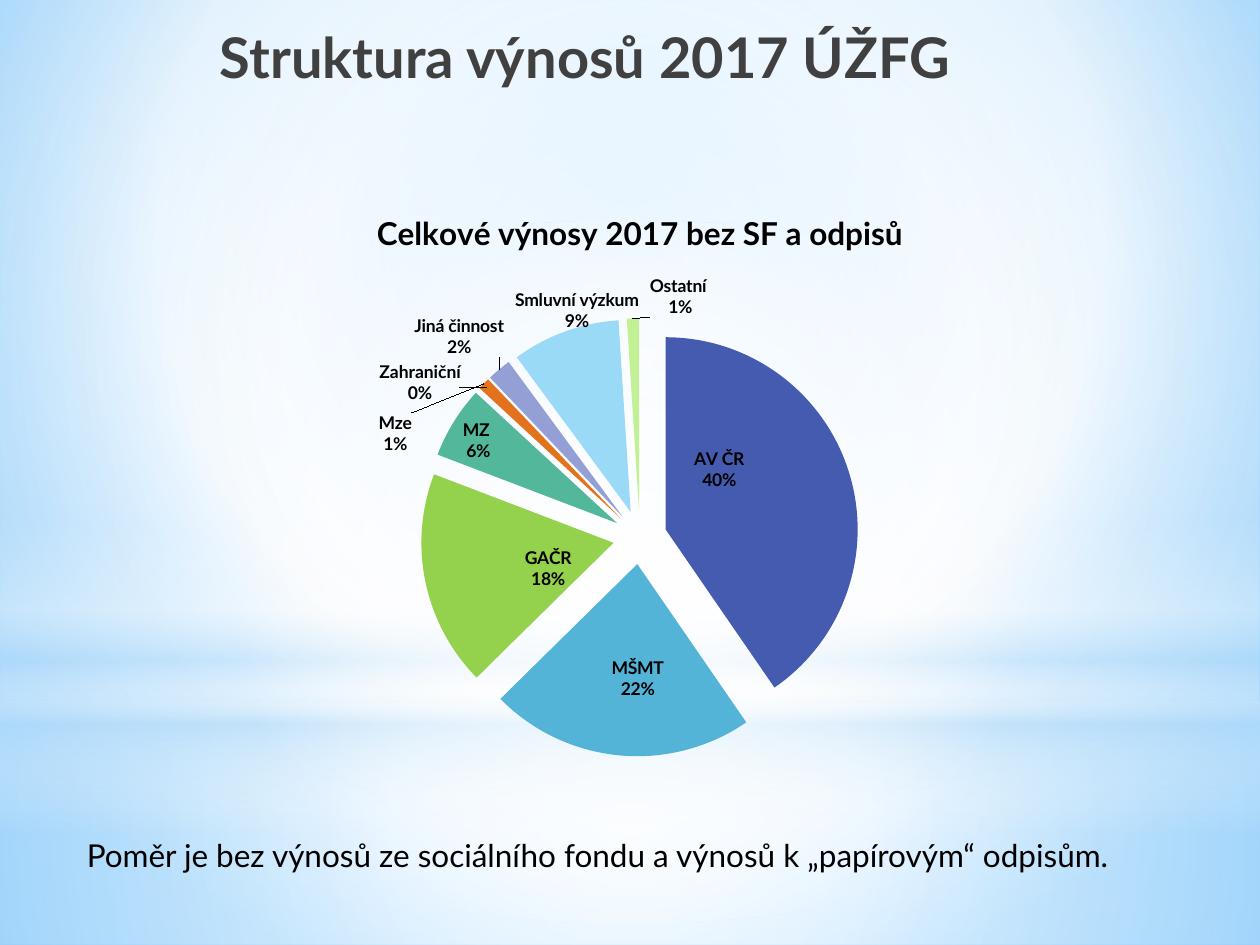
from lxml.etree import SubElement
from pptx import Presentation
from pptx.chart.data import CategoryChartData
from pptx.dml.color import RGBColor
from pptx.enum.chart import XL_CHART_TYPE, XL_LABEL_POSITION
from pptx.enum.shapes import MSO_CONNECTOR, MSO_SHAPE
from pptx.enum.text import MSO_ANCHOR, PP_ALIGN
from pptx.oxml import parse_xml
from pptx.oxml.ns import nsdecls, qn
from pptx.util import Cm, Pt

FONT = "Lato"
COLORS = {
    "text": "000000", "title": "404040", "white": "FFFFFF", "pale": "B4DCFA",
    "sky": "9ED5FF", "azure": "5BB9FF",
    "navy": "455BB0", "blue": "53B4D8", "green": "94D14C", "teal": "53B79B",
    "orange": "E3721D", "red": "D63A20", "lavender": "949FD6",
    "light blue": "9BDAF6", "light green": "C2F094",
}


def apply_gradient(fill, element, stops, focus=None):
    fill.gradient()
    default = element.find(".//" + qn("a:gradFill"))
    stop_xml = "".join(
        f'<a:gs pos="{position * 1000}"><a:srgbClr val="{COLORS[color]}">'
        f'<a:alpha val="{alpha * 1000}"/></a:srgbClr></a:gs>'
        for position, color, alpha in stops)
    if focus:
        sides = " ".join(f'{side}="{value * 1000}"' for side, value in zip("ltrb", focus))
        direction = f'<a:path path="circle"><a:fillToRect {sides}/></a:path>'
    else:
        direction = '<a:lin ang="5400000" scaled="0"/>'
    default.getparent().replace(default, parse_xml(
        f'<a:gradFill {nsdecls("a")} rotWithShape="1"><a:gsLst>{stop_xml}</a:gsLst>'
        f'{direction}</a:gradFill>'))


def manual_layout(**settings):
    layout = parse_xml(f'<c:layout {nsdecls("c")}><c:manualLayout/></c:layout>')
    for name, value in settings.items():
        SubElement(layout[0], qn(f"c:{name}")).set("val", str(value))
    return layout


presentation = Presentation()
presentation.slide_width, presentation.slide_height = Cm(25.4), Cm(19.05)
slide = presentation.slides.add_slide(presentation.slide_layouts[5])
apply_gradient(slide.background.fill, slide.element,
               [(0, "sky", 100), (60, "white", 100), (100, "azure", 100)], (20, 10, 20, 60))

CENTER = (50, 50, 50, 50)
backdrops = [
    (MSO_SHAPE.RECTANGLE, 14.17, 4.88, CENTER,
     [(0, "white", 91), (37, "white", 76), (100, "pale", 79)]),
    (MSO_SHAPE.RECTANGLE, 0, 14.17, CENTER,
     [(0, "white", 89), (48, "white", 62), (100, "pale", 79)]),
    (MSO_SHAPE.RECTANGLE, 10.46, 6.35, None,
     [(0, "white", 0), (29, "white", 30), (45, "pale", 40),
      (55, "white", 26), (65, "pale", 60), (100, "white", 0)]),
    (MSO_SHAPE.OVAL, 4.45, 14.17, CENTER, [(0, "white", 100), (56, "white", 0)]),
]
for kind, top, height, focus, stops in backdrops:
    shape = slide.shapes.add_shape(kind, 0, Cm(top), Cm(25.4), Cm(height))
    shape.shadow.inherit = False
    shape.line.fill.background()
    apply_gradient(shape.fill, shape.element, stops, focus)

title = slide.shapes.title
title.left, title.top, title.width, title.height = Cm(0.3), Cm(0.33), Cm(23), Cm(2.39)
title.text_frame.text = "Struktura výnosů 2017 ÚŽFG"
title.text_frame.vertical_anchor = MSO_ANCHOR.TOP
title.text_frame.paragraphs[0].alignment = PP_ALIGN.CENTER
slide.shapes._spTree.append(title.element)

INSIDE, OUTSIDE = XL_LABEL_POSITION.CENTER, XL_LABEL_POSITION.OUTSIDE_END
slices = [
    ("AV ČR", 40, "navy", INSIDE, -0.04, -0.05),
    ("MŠMT", 22, "blue", INSIDE, 0.01, 0.03),
    ("GAČR", 18, "green", INSIDE, 0.03, 0.01),
    ("MZ ", 6, "teal", INSIDE, -0.06, -0.05),
    ("Mze", 1, "orange", OUTSIDE, -0.07, 0.12),
    ("Zahraniční", 0, "red", OUTSIDE, 0, 0),
    ("Jiná činnost", 2, "lavender", OUTSIDE, 0.01, -0.01),
    ("Smluvní výzkum", 9, "light blue", OUTSIDE, 0.08, 0.01),
    ("Ostatní ", 1, "light green", OUTSIDE, 0.05, 0.01),
]
chart_data = CategoryChartData(number_format="#,##0")
chart_data.categories = [name for name, *_ in slices]
chart_data.add_series("Series 1", [value for _, value, *_ in slices])
chart = slide.shapes.add_chart(XL_CHART_TYPE.PIE, Cm(3.3), Cm(3.73), Cm(19.2), Cm(12.8),
                               chart_data).chart
chart.has_legend = False
chart.font.name, chart.font.size = FONT, Pt(10)
chart.font.color.rgb = RGBColor.from_string(COLORS["text"])
chart.has_title = True
chart_title = chart.chart_title.text_frame
chart_title.text = "Celkové výnosy 2017 bez SF a odpisů"

plot = chart.plots[0]
plot.vary_by_categories = True
series = plot.series[0]
for index, (_, _, color, position, _, _) in enumerate(slices):
    point = series.points[index]
    point.format.fill.solid()
    point.format.fill.fore_color.rgb = RGBColor.from_string(COLORS[color])
    point.format.line.fill.background()
    label = point.data_label
    label.font.name, label.font.size, label.font.bold = FONT, Pt(10), True
    label.font.color.rgb = RGBColor.from_string(COLORS["text"])
    label.position = position

series_element = chart.element.find(".//" + qn("c:ser"))
for label_element, (_, value, _, _, x, y) in zip(series_element.iter(qn("c:dLbl")), slices):
    visible = int(value > 0)
    for name, shown in (("showVal", 0), ("showCatName", visible), ("showPercent", visible)):
        label_element.find(qn(f"c:{name}")).set("val", str(shown))
    SubElement(label_element, qn("c:separator")).text = "\n"
    label_element.insert(1, parse_xml(
        f'<c:numFmt {nsdecls("c")} formatCode="0%" sourceLinked="0"/>'))
    label_element.insert(1, manual_layout(x=x, y=y))
explosion = parse_xml(f'<c:explosion {nsdecls("c")} val="14"/>')
series_element.find(qn("c:dPt")).addprevious(explosion)

plot_area = chart.element.find(".//" + qn("c:plotArea"))
for layout in plot_area.findall(qn("c:layout")):
    plot_area.remove(layout)
plot_area.insert(0, manual_layout(layoutTarget="inner", xMode="edge", yMode="edge",
                                  x=0.27, y=0.21, w=0.46, h=0.69))

zero_label = slide.shapes.add_textbox(Cm(7.17), Cm(7.28), Cm(2.6), Cm(0.86))
zero_frame = zero_label.text_frame
zero_frame.text = "Zahraniční\n0%"
zero_frame.word_wrap = True
zero_frame.margin_left = zero_frame.margin_right = 0
zero_frame.margin_top = zero_frame.margin_bottom = 0
for paragraph in zero_frame.paragraphs:
    paragraph.alignment = PP_ALIGN.CENTER

leader = slide.shapes.add_connector(MSO_CONNECTOR.STRAIGHT,
                                    Cm(9.25), Cm(7.82), Cm(9.82), Cm(7.82))
leader.line.color.rgb = RGBColor.from_string(COLORS["text"])
leader.line.width = Pt(0.5)
SubElement(leader.element.spPr, qn("a:effectLst"))

caption = slide.shapes.add_textbox(Cm(1.5), Cm(16.73), Cm(22.6), Cm(1.02))
caption.text_frame.word_wrap = True
caption.text_frame.text = ("Poměr je bez výnosů ze sociálního fondu "
                           "a výnosů k „papírovým“ odpisům.")

for text_frame, size, bold, color in ((title.text_frame, 32, True, "title"),
                                      (chart_title, 18, True, "text"),
                                      (zero_frame, 10, True, "text"),
                                      (caption.text_frame, 18, False, "text")):
    for paragraph in text_frame.paragraphs:
        font = paragraph.runs[0].font
        font.name, font.size, font.bold = FONT, Pt(size), bold
        font.color.rgb = RGBColor.from_string(COLORS[color])

presentation.save("out.pptx")
